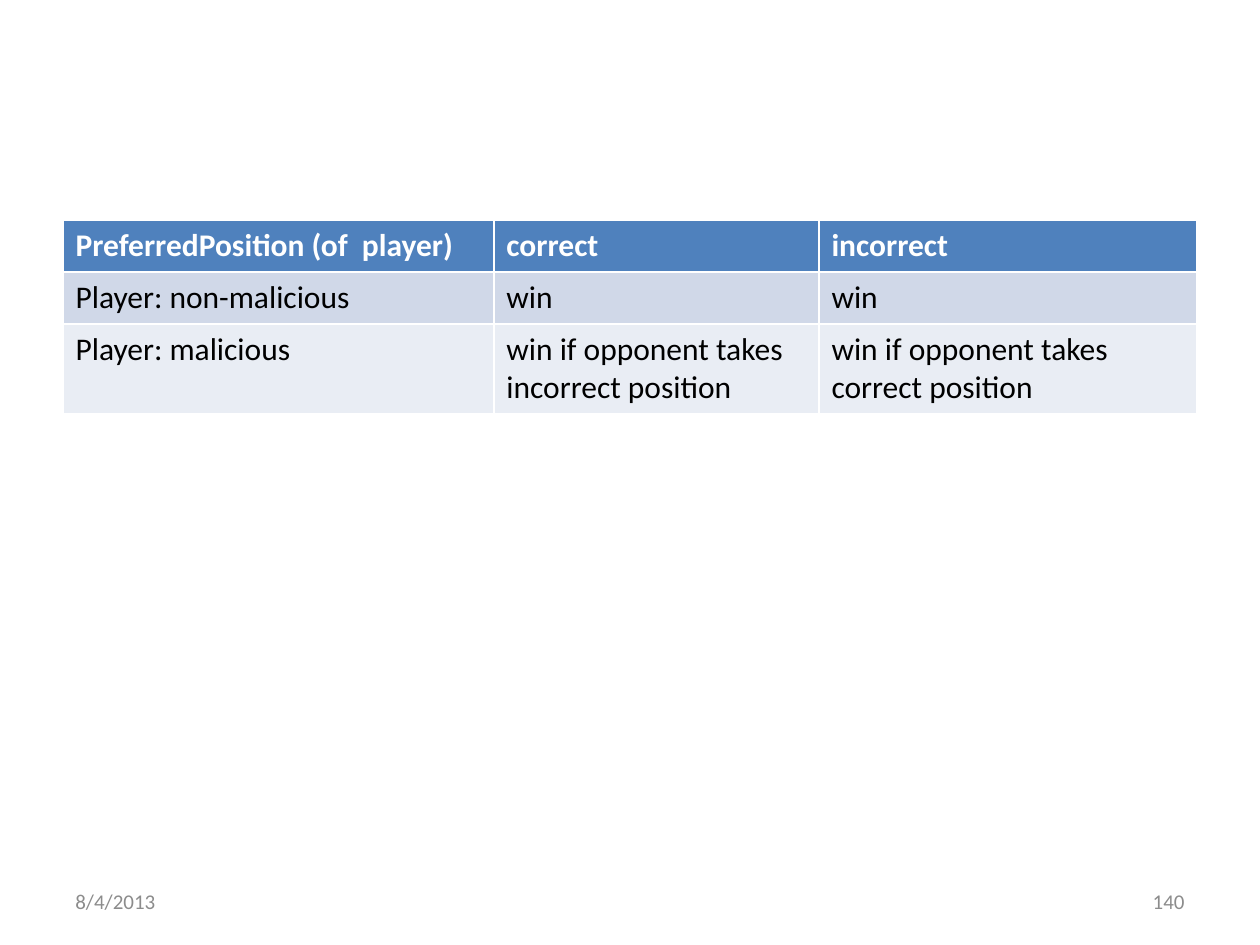
from pptx import Presentation
from pptx import util as u
from pptx.dml.color import RGBColor
from pptx.enum import text

WIDE, HIGH = u.Inches(10), u.Inches(7.5)
EDGE = 0.05
FONT = "Calibri"
WHITE = RGBColor(0xFF, 0xFF, 0xFF)
BLACK = RGBColor(0, 0, 0)
GREY = RGBColor(0x8C, 0x8C, 0x8C)
BLUE = RGBColor(0x4F, 0x81, 0xBD)
PALE = RGBColor(0xD0, 0xD8, 0xE8)
LIGHT = RGBColor(0xE9, 0xED, 0xF4)

COLS = [3.42, 2.58, 3]
ROWS = [
    (0.41, BLUE, WHITE, True,
     ["PreferredPosition (of  player)", "correct", "incorrect"]),
    (0.41, PALE, BLACK, False,
     ["Player: non-malicious", "win", "win"]),
    (0.71, LIGHT, BLACK, False,
     ["Player: malicious",
      "win if opponent takes\nincorrect position",
      "win if opponent takes correct position"]),
]


def write(frame, words, size, color, bold=False, align=text.PP_ALIGN.LEFT):
    for row, line in enumerate(words.split("\n")):
        para = frame.add_paragraph() if row else frame.paragraphs[0]
        para.alignment = align
        run = para.add_run()
        run.text = line
        font = run.font
        font.name, font.size, font.bold = FONT, u.Pt(size), bold
        font.color.rgb = color


def add_grid(slide):
    tall = sum(row[0] for row in ROWS)
    grid = slide.shapes.add_table(
        len(ROWS), len(COLS), int(WIDE * EDGE), u.Inches(1.75),
        u.Inches(sum(COLS)), u.Inches(tall)).table
    for col, width in zip(grid.columns, COLS):
        col.width = u.Inches(width)
    for line, (height, fill, ink, bold, words) in zip(grid.rows, ROWS):
        line.height = u.Inches(height)
        for cell, word in zip(line.cells, words):
            cell.fill.solid()
            cell.fill.fore_color.rgb = fill
            write(cell.text_frame, word, 18, ink, bold)


def add_foot(slide, left, words, align):
    box = slide.shapes.add_textbox(
        int(WIDE * left), u.Inches(6.95), u.Inches(2.33), u.Inches(0.4))
    frame = box.text_frame
    frame.word_wrap = True
    frame.vertical_anchor = text.MSO_ANCHOR.MIDDLE
    write(frame, words, 12, GREY, align=align)


def main():
    deck = Presentation()
    deck.slide_width, deck.slide_height = WIDE, HIGH
    slide = deck.slides.add_slide(deck.slide_layouts[6])
    add_grid(slide)
    add_foot(slide, EDGE, "8/4/2013", text.PP_ALIGN.LEFT)
    add_foot(slide, 1 - EDGE - 0.233, "140", text.PP_ALIGN.RIGHT)
    deck.save("out.pptx")


if __name__ == "__main__":
    main()
